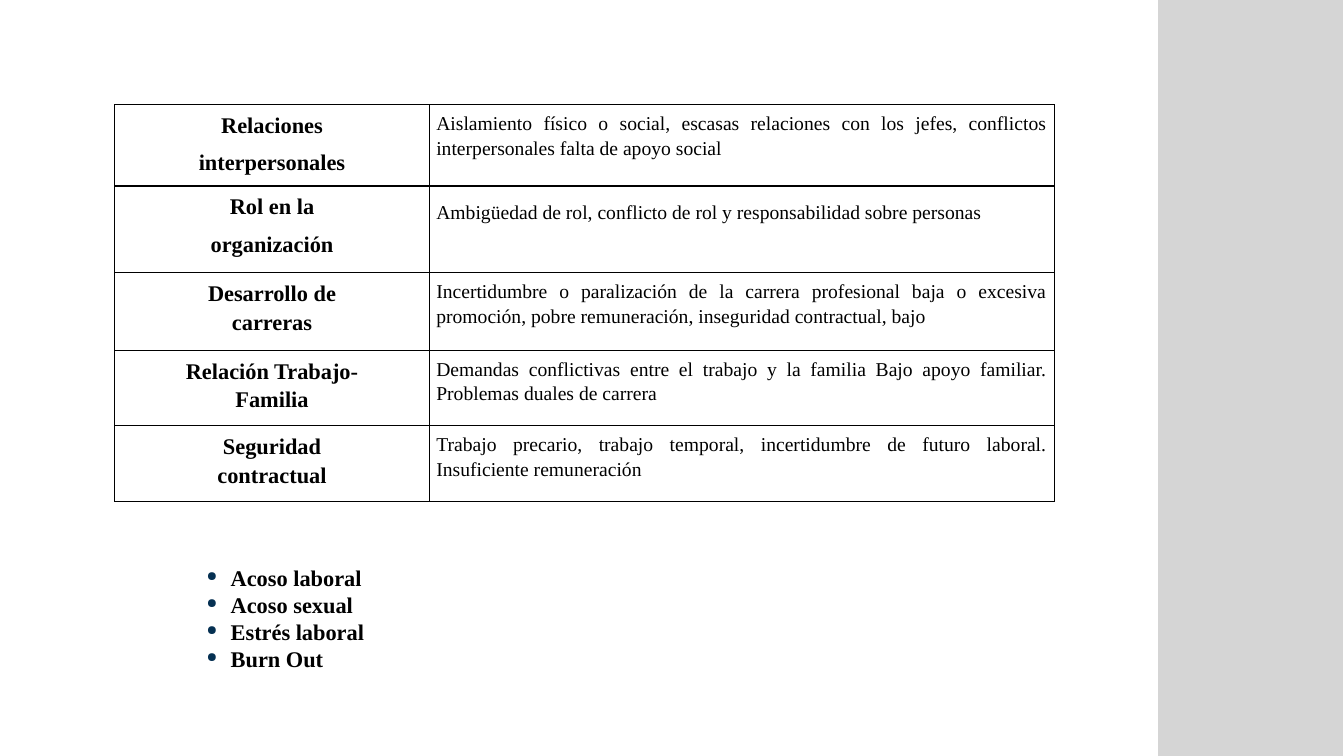
"""Build a slide with a table of psychosocial risk factors and a list of their effects."""
from dataclasses import dataclass

from lxml.etree import SubElement
from pptx import Presentation
from pptx.dml.color import RGBColor
from pptx.enum.shapes import MSO_SHAPE as Preset
from pptx.enum.text import MSO_ANCHOR as Anchor, MSO_AUTO_SIZE as AutoSize, PP_ALIGN as Align
from pptx.oxml import parse_xml
from pptx.oxml.ns import nsdecls, qn
from pptx.slide import Slide
from pptx.table import _Cell as Cell
from pptx.text.text import _Paragraph as Paragraph
from pptx.util import Pt


@dataclass(frozen=True)
class Theme:
    font: str = "Times New Roman"
    ink: str = "000000"
    band: str = "D5D5D5"
    bullet: str = "053052"
    heading_size: float = 16
    detail_size: float = 14
    border: float = 0.96


@dataclass(frozen=True)
class RiskFactor:
    heading: tuple[str, str]
    detail: str
    height: float
    last_spacing: float = 1.15
    detail_spacing: float = 1.15


THEME = Theme()
SPACING = 1.15
COLUMN_WIDTHS = (224.64, 446.4)
RISK_FACTORS = (
    RiskFactor(("Relaciones", "interpersonales"),
               "Aislamiento físico o social, escasas relaciones con los jefes, "
               "conflictos interpersonales falta de apoyo social", 54, last_spacing=1.5),
    RiskFactor(("Rol en la", "organización"),
               "Ambigüedad de rol, conflicto de rol y responsabilidad sobre personas",
               61.9, last_spacing=1.5, detail_spacing=1.5),
    RiskFactor(("Desarrollo de", "carreras"),
               "Incertidumbre o paralización de la carrera profesional baja o excesiva "
               "promoción, pobre remuneración, inseguridad contractual, bajo", 55.5),
    RiskFactor(("Relación Trabajo-", "Familia"),
               "Demandas conflictivas entre el trabajo y la familia Bajo apoyo familiar. "
               "Problemas duales de carrera", 54),
    RiskFactor(("Seguridad", "contractual"),
               "Trabajo precario, trabajo temporal, incertidumbre de futuro laboral. "
               "Insuficiente remuneración", 54),
)
EFFECTS = ("Acoso laboral", "Acoso sexual", "Estrés laboral", "Burn Out")


def set_all(target: object, values: dict[str, object]) -> None:
    """Set every attribute listed in a dict of format values."""
    for attribute, value in values.items():
        setattr(target, attribute, value)


def write(paragraph: Paragraph, wording: str, size: float, bold: bool) -> None:
    """Add one run of text in the theme font."""
    run = paragraph.add_run()
    run.text = wording
    set_all(run.font, {"name": THEME.font, "size": Pt(size), "bold": bold})
    run.font.color.rgb = RGBColor.from_string(THEME.ink)


def add_bullet(paragraph: Paragraph) -> None:
    """Give a paragraph a small coloured bullet with a hanging indent."""
    properties = paragraph._p.get_or_add_pPr()
    properties.set("marL", str(Pt(17.28)))
    properties.set("indent", str(-Pt(17.28)))
    colour = SubElement(properties, qn("a:buClr"))
    SubElement(colour, qn("a:srgbClr"), val=THEME.bullet)
    SubElement(properties, qn("a:buSzPct"), val="60000")
    SubElement(properties, qn("a:buChar"), char="●")
    tabs = SubElement(properties, qn("a:tabLst"))
    SubElement(tabs, qn("a:tab"), pos="0", algn="l")


def format_cell(cell: Cell) -> None:
    """Clear the fill, set the margins and draw the four borders of a cell."""
    set_all(cell, {"margin_left": Pt(5.04), "margin_right": Pt(5.04),
                   "margin_top": Pt(3.6), "margin_bottom": Pt(3.6)})
    cell.fill.background()
    properties = cell._tc.get_or_add_tcPr()
    for position, side in enumerate(("lnL", "lnR", "lnT", "lnB")):
        properties.insert(position, parse_xml(
            f'<a:{side} {nsdecls("a")} w="{Pt(THEME.border)}"><a:solidFill>'
            f'<a:srgbClr val="{THEME.ink}"/></a:solidFill></a:{side}>'))


def fill_cell(cell: Cell, lines: tuple[str, ...], spacings: tuple[float, ...],
              align: Align, size: float, bold: bool) -> None:
    """Write one paragraph per line into a formatted cell."""
    format_cell(cell)
    frame = cell.text_frame
    for index, (line, spacing) in enumerate(zip(lines, spacings)):
        paragraph = frame.add_paragraph() if index else frame.paragraphs[0]
        set_all(paragraph, {"alignment": align, "line_spacing": spacing})
        write(paragraph, line, size, bold)


def draw_side_band(slide: Slide) -> None:
    """Draw the grey band along the right edge."""
    band = slide.shapes.add_shape(Preset.RECTANGLE, Pt(827.3), Pt(-2), Pt(132), Pt(544))
    band.shadow.inherit = False
    band.fill.solid()
    band.fill.fore_color.rgb = RGBColor.from_string(THEME.band)
    band.line.fill.background()


def draw_effects(slide: Slide) -> None:
    """Draw the bulleted list of effects."""
    frame = slide.shapes.add_textbox(Pt(145.4), Pt(401), Pt(365), Pt(80.6)).text_frame
    margins = dict.fromkeys(
        ("margin_left", "margin_right", "margin_top", "margin_bottom"), Pt(2.16))
    set_all(frame, {"word_wrap": True, "auto_size": AutoSize.SHAPE_TO_FIT_TEXT,
                    "vertical_anchor": Anchor.MIDDLE, **margins})
    for index, effect in enumerate(EFFECTS):
        paragraph = frame.add_paragraph() if index else frame.paragraphs[0]
        add_bullet(paragraph)
        write(paragraph, effect, THEME.heading_size, True)


def draw_risk_table(slide: Slide) -> None:
    """Draw the table of risk factors."""
    table = slide.shapes.add_table(
        len(RISK_FACTORS), len(COLUMN_WIDTHS), Pt(82), Pt(74.8), Pt(sum(COLUMN_WIDTHS)),
        Pt(sum(factor.height for factor in RISK_FACTORS))).table
    set_all(table, {"first_row": False, "horz_banding": False})
    for column, width in zip(table.columns, COLUMN_WIDTHS):
        column.width = Pt(width)
    for row, factor in zip(table.rows, RISK_FACTORS):
        row.height = Pt(factor.height)
        heading, detail = row.cells
        fill_cell(heading, factor.heading, (SPACING, factor.last_spacing),
                  Align.CENTER, THEME.heading_size, True)
        fill_cell(detail, (factor.detail,), (factor.detail_spacing,),
                  Align.JUSTIFY, THEME.detail_size, False)


def main() -> None:
    """Build and save the presentation."""
    presentation = Presentation()
    set_all(presentation, {"slide_width": Pt(960), "slide_height": Pt(540)})
    slide = presentation.slides.add_slide(presentation.slide_layouts[6])
    draw_side_band(slide)
    draw_effects(slide)
    draw_risk_table(slide)
    presentation.save("out.pptx")


if __name__ == "__main__":
    main()
